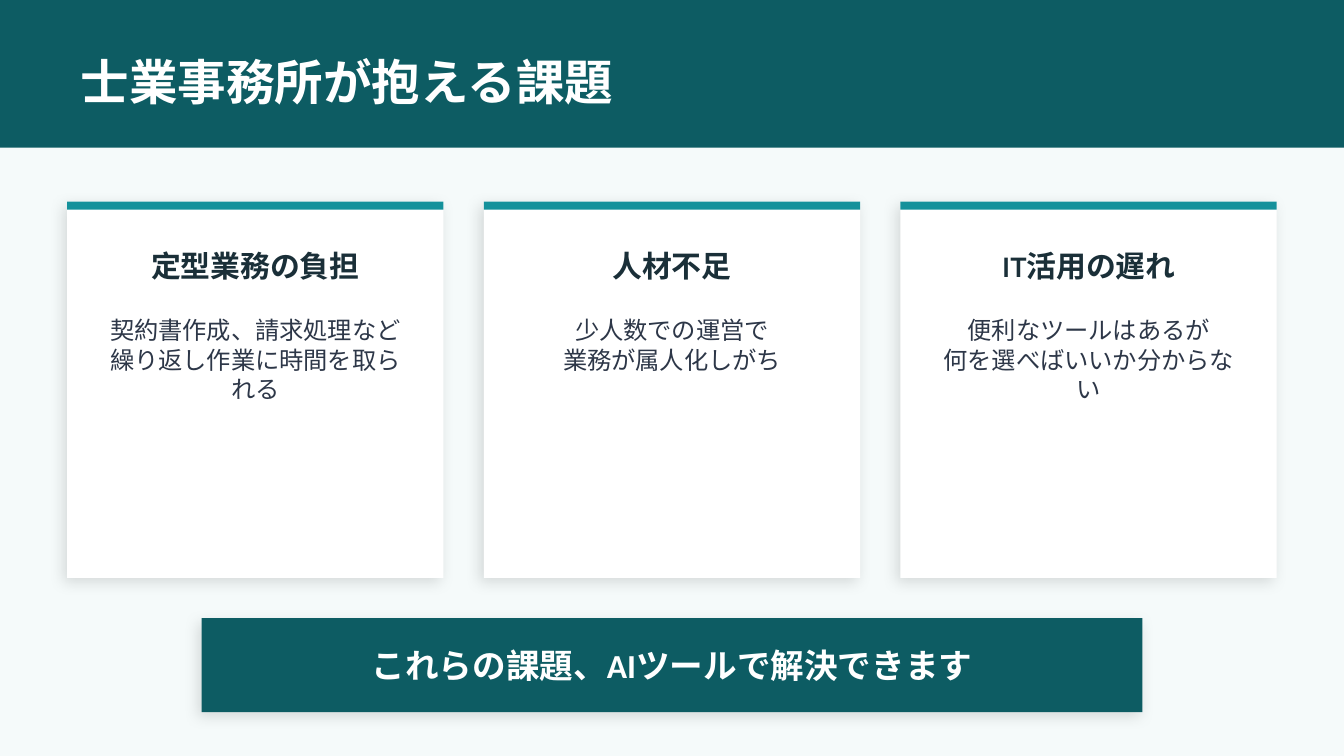
from lxml import etree
from pptx import Presentation
from pptx.dml.color import RGBColor
from pptx.enum.shapes import MSO_SHAPE
from pptx.enum.text import MSO_ANCHOR, MSO_AUTO_SIZE, PP_ALIGN
from pptx.oxml.ns import qn
from pptx.util import Inches, Pt

RECTANGLE = MSO_SHAPE.RECTANGLE
TOP, MIDDLE = MSO_ANCHOR.TOP, MSO_ANCHOR.MIDDLE
LEFT, CENTER = PP_ALIGN.LEFT, PP_ALIGN.CENTER
NO_AUTOFIT = MSO_AUTO_SIZE.NONE

SLIDE_WIDTH = 10
SLIDE_HEIGHT = SLIDE_WIDTH * 9 / 16

TEAL, ACCENT, WHITE = "0D5C63", "14919B", "FFFFFF"
TITLE_FONT = {"name": "Karla", "size": Pt(26), "bold": True, "color": WHITE}
HEADING_FONT = {"name": "Karla", "size": Pt(16), "bold": True, "color": "1A2F38"}
BODY_FONT = {"name": "Calibri", "size": Pt(13), "bold": False, "color": "2D3748"}
BANNER_FONT = {"name": "Calibri", "size": Pt(18), "bold": True, "color": WHITE}

CARD_SIZE, CARD_GAP = 2.8, 0.3
ISSUES = [
    ("定型業務の負担", ["契約書作成、請求処理など", "繰り返し作業に時間を取られる"]),
    ("人材不足", ["少人数での運営で", "業務が属人化しがち"]),
    ("IT活用の遅れ", ["便利なツールはあるが", "何を選べばいいか分からない"]),
]


def rgb(value):
    """Turn a hex string into a colour."""
    return RGBColor.from_string(value)


def add_soft_shadow(shape):
    """Give a shape a faint black drop shadow."""
    effects = shape.element.spPr.find(qn("a:effectLst"))
    shadow = etree.SubElement(effects, qn("a:outerShdw"), blurRad=str(Pt(8)),
                              dist=str(Pt(3)), dir=str(135 * 60000),
                              algn="bl", rotWithShape="0")
    black = etree.SubElement(shadow, qn("a:srgbClr"), val="000000")
    etree.SubElement(black, qn("a:alpha"), val="12000")


def add_block(slide, box, color, raised=False):
    """Add a plain filled rectangle, optionally with a shadow."""
    block = slide.shapes.add_shape(RECTANGLE, *map(Inches, box))
    block.shadow.inherit = False
    block.fill.solid()
    block.fill.fore_color.rgb = rgb(color)
    block.line.fill.background()
    if raised:
        add_soft_shadow(block)
    return block


def write(shape, lines, font_format, align=CENTER, anchor=MIDDLE):
    """Write formatted paragraphs into a shape."""
    frame = shape.text_frame
    frame.word_wrap = True
    frame.auto_size = NO_AUTOFIT
    frame.vertical_anchor = anchor
    frame.text = "\n".join(lines)
    for paragraph in frame.paragraphs:
        paragraph.alignment = align
        for run in paragraph.runs:
            for key, value in font_format.items():
                if key == "color":
                    run.font.color.rgb = rgb(value)
                else:
                    setattr(run.font, key, value)


def add_text(slide, box, lines, font_format, anchor=MIDDLE):
    """Add a text box with centred paragraphs."""
    write(slide.shapes.add_textbox(*map(Inches, box)), lines, font_format, anchor=anchor)


def add_header(slide, box, text):
    """Place the title on a coloured band."""
    left, top, width, _ = box
    band = add_block(slide, box, TEAL)
    title = slide.shapes.title
    title.element.addprevious(band.element)
    title.left, title.top = Inches(left + 0.6), Inches(top + 0.35)
    title.width, title.height = Inches(width - 2), Inches(0.5)
    for side in ("left", "top", "right", "bottom"):
        setattr(title.text_frame, f"margin_{side}", 0)
    write(title, [text], TITLE_FONT, align=LEFT)


def add_card(slide, box, heading, body):
    """Draw one issue card with its accent strip, heading and body."""
    left, top, width, height = box
    inner_left, inner_width = left + 0.2, width - 0.4
    add_block(slide, box, WHITE, raised=True)
    add_block(slide, (left, top, width, 0.06), ACCENT)
    add_text(slide, (inner_left, top + 0.25, inner_width, 0.45), [heading], HEADING_FONT)
    add_text(slide, (inner_left, top + 0.8, inner_width, height - 1.2), body, BODY_FONT, TOP)


def add_banner(slide, box, text):
    """Draw the closing message bar."""
    write(add_block(slide, box, TEAL, raised=True), [text], BANNER_FONT)


def main():
    """Build and save the slide."""
    deck = Presentation()
    deck.slide_width, deck.slide_height = Inches(SLIDE_WIDTH), Inches(SLIDE_HEIGHT)
    slide = deck.slides.add_slide(deck.slide_layouts[5])
    slide.background.fill.solid()
    slide.background.fill.fore_color.rgb = rgb("F5FAFA")

    add_header(slide, (0, 0, SLIDE_WIDTH, 1.1), "士業事務所が抱える課題")
    for index, (heading, body) in enumerate(ISSUES):
        left = 0.5 + index * (CARD_SIZE + CARD_GAP)
        add_card(slide, (left, 1.5, CARD_SIZE, CARD_SIZE), heading, body)
    add_banner(slide, (1.5, 4.6, 7, 0.7), "これらの課題、AIツールで解決できます")
    deck.save("out.pptx")


if __name__ == "__main__":
    main()
